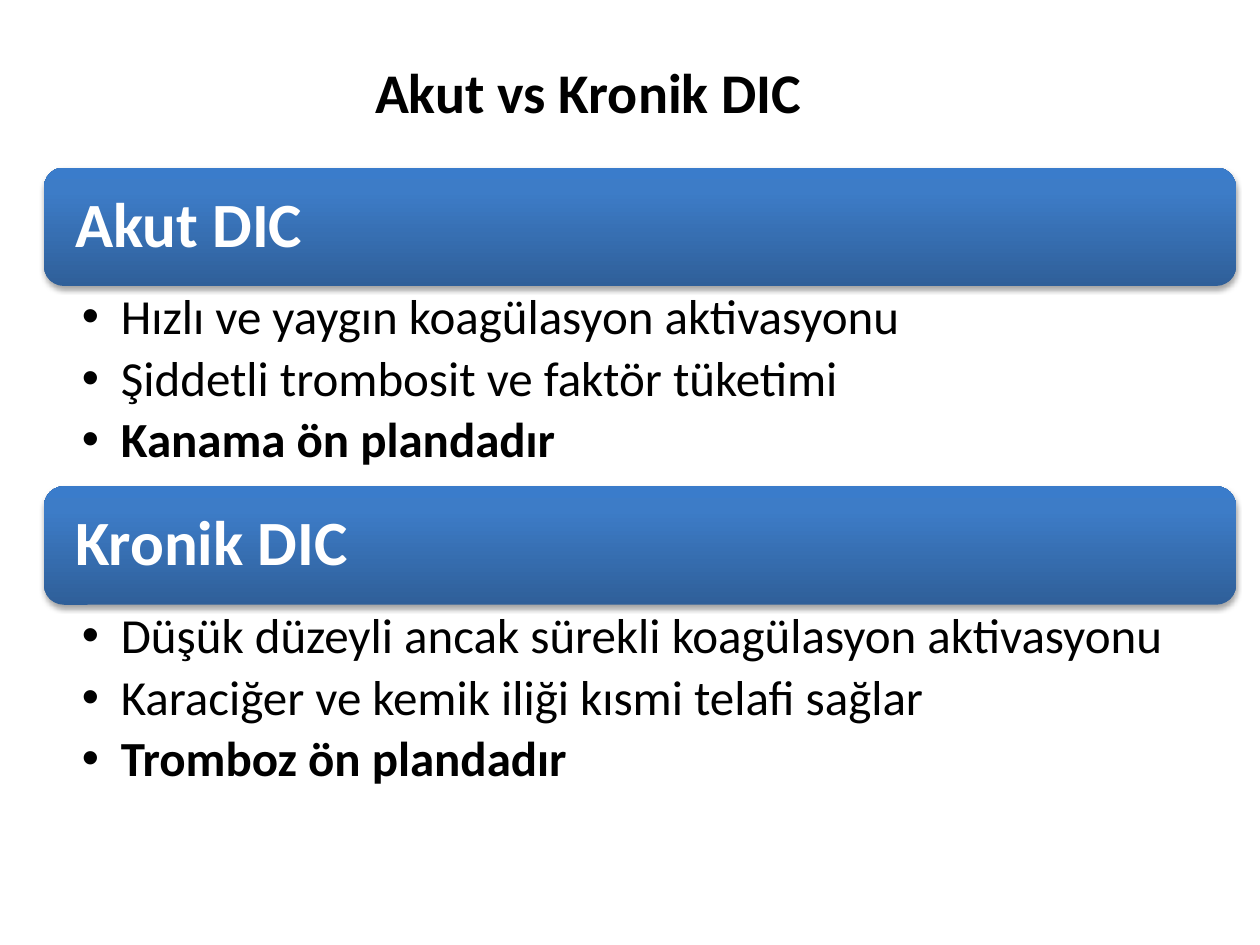
from lxml import etree
from pptx import Presentation
from pptx.dml.color import RGBColor
from pptx.enum import shapes, text
from pptx.oxml.ns import qn
from pptx.util import Inches, Pt

TITLE = "Akut vs Kronik DIC "
SECTIONS = [
    ("Akut DIC", [
        "Hızlı ve yaygın koagülasyon aktivasyonu",
        "Şiddetli trombosit ve faktör tüketimi",
        "Kanama ön plandadır",
    ]),
    ("Kronik DIC", [
        "Düşük düzeyli ancak sürekli koagülasyon aktivasyonu",
        "Karaciğer ve kemik iliği kısmi telafi sağlar",
        "Tromboz ön plandadır",
    ]),
]
THEME = {
    "font": "Calibri",
    "title": 32, "heading": 36, "body": 28,
    "ink": "000000", "paper": "FFFFFF",
    "gradient": [(0, "2F5F99"), (80, "3D7CC7"), (100, "3A7CCB")],
}
LEFT, TOP, WIDTH = 0.35, 1.33, 9.46
BAR_HEIGHT, LIST_HEIGHT = 0.94, 1.59


def style(para, size, color, bold=False):
    font = para.font
    font.name, font.size, font.bold = THEME["font"], Pt(size), bold
    font.color.rgb = RGBColor.from_string(color)


def set_margins(frame, left, top, right, bottom):
    frame.margin_left, frame.margin_top = Inches(left), Inches(top)
    frame.margin_right, frame.margin_bottom = Inches(right), Inches(bottom)


def add_color(parent, color):
    return etree.SubElement(parent, qn("a:srgbClr"), val=color)


def paint_bar(bar):
    bar.fill.gradient()
    bar.fill.gradient_angle = 90
    bar.line.fill.background()
    stops = bar._element.spPr.find(".//" + qn("a:gsLst"))
    for stop in list(stops):
        stops.remove(stop)
    for position, color in THEME["gradient"]:
        add_color(etree.SubElement(stops, qn("a:gs"), pos=str(position * 1000)), color)
    bar.shadow.inherit = False
    effects = bar._element.spPr.find(qn("a:effectLst"))
    shadow = etree.SubElement(
        effects, qn("a:outerShdw"), blurRad=str(Pt(3.1)), dist=str(Pt(1.8)),
        dir="5400000", rotWithShape="0")
    etree.SubElement(add_color(shadow, THEME["ink"]), qn("a:alpha"), val="35000")


def add_heading(slide, top, heading):
    bar = slide.shapes.add_shape(
        shapes.MSO_SHAPE.ROUNDED_RECTANGLE,
        Inches(LEFT), Inches(top), Inches(WIDTH), Inches(BAR_HEIGHT))
    paint_bar(bar)
    frame = bar.text_frame
    set_margins(frame, 0.2, 0.15, 0.2, 0.15)
    frame.vertical_anchor = text.MSO_ANCHOR.MIDDLE
    para = frame.paragraphs[0]
    para.text, para.line_spacing = heading, 0.9
    para.alignment = text.PP_ALIGN.LEFT
    style(para, THEME["heading"], THEME["paper"], True)


def add_points(slide, top, points):
    box = slide.shapes.add_textbox(
        Inches(LEFT), Inches(top), Inches(WIDTH), Inches(LIST_HEIGHT))
    frame = box.text_frame
    frame.word_wrap = True
    set_margins(frame, 0.3, 0.05, 0.28, 0.05)
    for index, point in enumerate(points):
        para = frame.add_paragraph() if index else frame.paragraphs[0]
        para.text, para.level = point, 1
        para.line_spacing, para.space_after = 0.9, Pt(5)
        props = para._p.get_or_add_pPr()
        props.set("marL", str(Inches(0.31)))
        props.set("indent", str(Inches(-0.31)))
        etree.SubElement(props, qn("a:buFont"), typeface="Arial")
        etree.SubElement(props, qn("a:buChar"), char="•")
        style(para, THEME["body"], THEME["ink"], index == len(points) - 1)


def add_title(slide):
    title = slide.shapes.title
    title.left, title.top = Inches(2.4), Inches(0.31)
    title.width, title.height = Inches(4.64), Inches(0.73)
    title.text_frame.vertical_anchor = text.MSO_ANCHOR.BOTTOM
    para = title.text_frame.paragraphs[0]
    para.text, para.alignment = TITLE, text.PP_ALIGN.CENTER
    style(para, THEME["title"], THEME["ink"], True)


def main():
    deck = Presentation()
    deck.slide_width, deck.slide_height = Inches(10), Inches(7.5)
    slide = deck.slides.add_slide(deck.slide_layouts[5])
    add_title(slide)
    for index, (heading, points) in enumerate(SECTIONS):
        top = TOP + index * (BAR_HEIGHT + LIST_HEIGHT)
        add_heading(slide, top, heading)
        add_points(slide, top + BAR_HEIGHT, points)
    deck.save("out.pptx")


if __name__ == "__main__":
    main()
